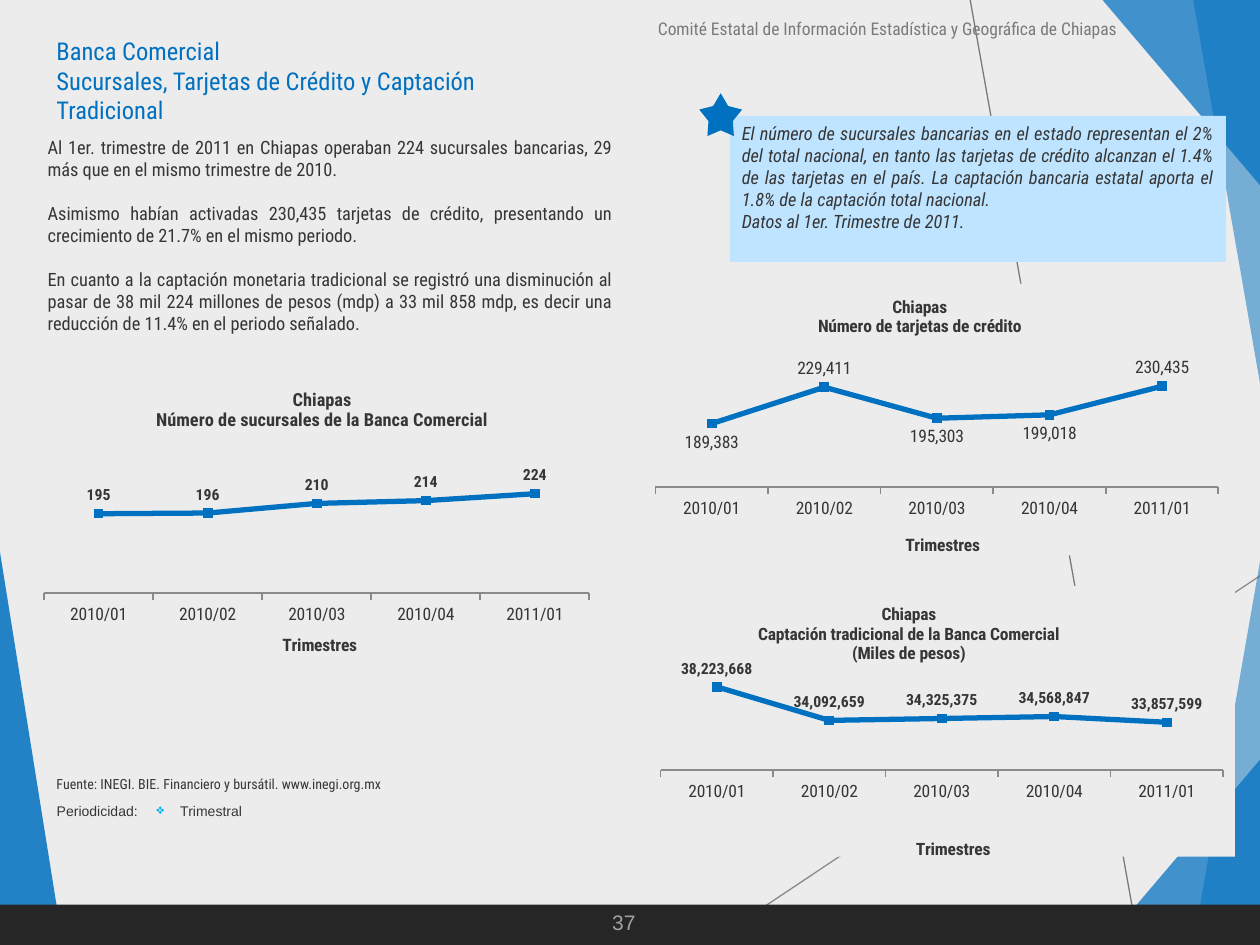
"""Build the Chiapas commercial banking slide with three quarterly line charts."""
from dataclasses import dataclass, field

from lxml import etree
from pptx import Presentation
from pptx.chart.data import CategoryChartData
from pptx.dml.color import RGBColor
from pptx.enum.chart import XL_CHART_TYPE, XL_LABEL_POSITION, XL_MARKER_STYLE, XL_TICK_MARK
from pptx.enum.shapes import MSO_CONNECTOR, MSO_SHAPE
from pptx.enum.text import MSO_ANCHOR, PP_ALIGN
from pptx.oxml import parse_xml
from pptx.oxml.ns import nsdecls, qn
from pptx.util import Inches, Pt

LEFT, RIGHT, JUSTIFY = PP_ALIGN.LEFT, PP_ALIGN.RIGHT, PP_ALIGN.JUSTIFY
TOP = MSO_ANCHOR.TOP
ABOVE, BELOW = XL_LABEL_POSITION.ABOVE, XL_LABEL_POSITION.BELOW
LINE_MARKERS = XL_CHART_TYPE.LINE_MARKERS
SQUARE = XL_MARKER_STYLE.SQUARE
TICK_OUTSIDE, TICK_NONE = XL_TICK_MARK.OUTSIDE, XL_TICK_MARK.NONE
RECTANGLE, STAR = MSO_SHAPE.RECTANGLE, MSO_SHAPE.STAR_5_POINT
STRAIGHT = MSO_CONNECTOR.STRAIGHT

BLUE = RGBColor(0x00, 0x70, 0xC0)
PALE_BLUE = RGBColor(0xBF, 0xE4, 0xFF)
BACKGROUND = RGBColor(0xEC, 0xEC, 0xEC)
BLACK = RGBColor(0x26, 0x26, 0x26)
TEXT = RGBColor(0x36, 0x36, 0x36)
GREY = RGBColor(0x7A, 0x7A, 0x7A)
LINE_GREY = RGBColor(0x8A, 0x8A, 0x8A)
PAGE_GREY = RGBColor(0xA2, 0xA2, 0xA2)

CONDENSED, ARIAL = "Roboto Condensed", "Arial"
WIDTH, HEIGHT = 10, 7.5
QUARTERS = ["2010/01", "2010/02", "2010/03", "2010/04", "2011/01"]


@dataclass
class TextSpec:
    box: tuple
    paragraphs: list
    size: float
    font: str = CONDENSED
    color: RGBColor = TEXT
    align: PP_ALIGN = LEFT
    gap: float = 0
    italic: bool = False
    inset: bool = True
    wrap: bool = True
    bullet: bool = False


@dataclass
class ChartSpec:
    box: tuple
    title: list
    title_size: float
    title_place: tuple
    axis_title_place: tuple
    plot: tuple
    limits: tuple
    values: list
    label_size: float = 9
    label_bold: bool = True
    below: list = field(default_factory=list)
    filled: bool = True


TEXTS = [
    TextSpec((4.45, 0.09, 4.51, 0.27), ["Comité Estatal de Información Estadística y Geográfica de Chiapas"],
             10, color=GREY, align=RIGHT),
    TextSpec((0.35, 0.24, 4.33, 0.71),
             ["Banca Comercial\vSucursales, Tarjetas de Crédito y Captación Tradicional"], 14, color=BLUE),
    TextSpec((0.28, 1.03, 4.68, 1.69), [
        "Al 1er. trimestre de 2011 en Chiapas operaban 224 sucursales bancarias, 29 más que en el mismo "
        "trimestre de 2010.",
        "Asimismo habían activadas 230,435 tarjetas de crédito, presentando un crecimiento de 21.7% en el "
        "mismo periodo.",
        "En cuanto a la captación monetaria tradicional se registró una disminución al pasar de 38 mil 224 "
        "millones de pesos (mdp) a 33 mil 858 mdp, es decir una reducción de 11.4% en el periodo señalado.",
    ], 10.5, align=JUSTIFY, gap=12.6),
    TextSpec((0.35, 6.11, 3.87, 0.24), ["Fuente: INEGI. BIE. Financiero y bursátil. www.inegi.org.mx"], 8),
    TextSpec((4.76, 7.17, 0.39, 0.3), ["37"], 12, ARIAL, PAGE_GREY, wrap=False),
    TextSpec((0.45, 6.37, 0.65, 0.13), ["Periodicidad:"], 8, ARIAL, inset=False, wrap=False),
    TextSpec((1.24, 6.37, 0.69, 0.13), ["Trimestral"], 8, ARIAL, inset=False, wrap=False, bullet=True),
]
CALLOUT = TextSpec((5.79, 0.92, 3.94, 1.16), [
    "El número de sucursales bancarias en el estado representan el 2% del total nacional, en tanto las "
    "tarjetas de crédito alcanzan el 1.4% de las tarjetas en el país. La captación bancaria estatal aporta "
    "el 1.8% de la captación total nacional.",
    "Datos al 1er. Trimestre de 2011.",
], 10.5, align=JUSTIFY, italic=True)
CHARTS = [
    ChartSpec((0.25, 2.88, 4.57, 2.36), ["Chiapas", "Número de sucursales de la Banca Comercial"], 10.5,
              (0.21, 0.07), (0.43, 0.92), (0.022, 0.317, 0.947, 0.475), (80, 280),
              [195, 196, 210, 214, 224], filled=False),
    ChartSpec((5.16, 2.25, 4.65, 2.2), ["Chiapas", "Número de tarjetas de crédito"], 10,
              (0.28, 0.03), (0.43, 0.91), (0.009, 0.346, 0.961, 0.402), (120000, 240000),
              [189383, 229411, 195303, 199018, 230435], 10, False, [0, 2, 3]),
    ChartSpec((5.15, 4.65, 4.65, 2.21),
              ["Chiapas", "Captación tradicional de la Banca Comercial", "(Miles de pesos)"], 10,
              (0.18, 0.05), (0.45, 0.92), (0.02, 0.32, 0.96, 0.36), (28000000, 40000000),
              [38223668, 34092659, 34325375, 34568847, 33857599]),
]
CORNERS = [([(8.75, 7.5), (10, 6.03), (10, 7.5)], 72), ([(9.47, 7.5), (10, 4.46), (10, 7.5)], 50)]


def inches(values: tuple) -> list:
    return [Inches(value) for value in values]


def write_text(frame, spec: TextSpec) -> None:
    frame.word_wrap = spec.wrap
    frame.vertical_anchor = TOP
    if not spec.inset:
        frame.margin_left = frame.margin_right = frame.margin_top = frame.margin_bottom = 0
    for index, text in enumerate(spec.paragraphs):
        paragraph = frame.add_paragraph() if index else frame.paragraphs[0]
        paragraph.text = text
        paragraph.alignment = spec.align
        if index and spec.gap:
            paragraph.space_before = Pt(spec.gap)
        if spec.bullet:
            properties = paragraph._p.get_or_add_pPr()
            properties.set("marL", str(Inches(0.19)))
            properties.set("indent", str(-Inches(0.19)))
            properties.append(parse_xml(f'<a:buClr {nsdecls("a")}><a:srgbClr val="00B0F0"/></a:buClr>'))
            properties.append(parse_xml(f'<a:buChar {nsdecls("a")} char="❖"/>'))
        font = paragraph.font
        font.name, font.size, font.italic = spec.font, Pt(spec.size), spec.italic
        font.color.rgb = spec.color


def add_shape(slide, kind: MSO_SHAPE, box: tuple, color: RGBColor):
    shape = slide.shapes.add_shape(kind, *inches(box))
    shape.shadow.inherit = False
    shape.fill.solid()
    shape.fill.fore_color.rgb = color
    shape.line.fill.background()
    return shape


def add_triangle(slide, points: list, opacity: int) -> None:
    corners = [tuple(inches(point)) for point in points]
    builder = slide.shapes.build_freeform(*corners[0])
    builder.add_line_segments(corners[1:], close=True)
    triangle = builder.convert_to_shape()
    triangle.shadow.inherit = False
    triangle.fill.solid()
    triangle.fill.fore_color.rgb = BLUE
    triangle.line.fill.background()
    color = triangle._element.spPr.find(f"{qn('a:solidFill')}/{qn('a:srgbClr')}")
    etree.SubElement(color, qn("a:alpha"), val=str(opacity * 1000))


def add_line(slide, start: tuple, end: tuple, color: RGBColor) -> None:
    connector = slide.shapes.add_connector(STRAIGHT, *inches(start + end))
    connector.line.color.rgb = color
    connector.line.width = Pt(0.75)
    etree.SubElement(connector._element.spPr, qn("a:effectLst"))


def layout(place: tuple, inner: bool = False):
    target = '<c:layoutTarget val="inner"/>' if inner else ""
    modes = "".join(f'<c:{axis}Mode val="edge"/>' for axis in "xy")
    sizes = "".join(f'<c:{name} val="{value}"/>' for name, value in zip("xywh", place))
    return parse_xml(f'<c:layout {nsdecls("c")}><c:manualLayout>{target}{modes}{sizes}</c:manualLayout></c:layout>')


def set_title(title, lines: list, size: float, place: tuple) -> None:
    frame = title.text_frame
    for index, line in enumerate(lines):
        paragraph = frame.add_paragraph() if index else frame.paragraphs[0]
        paragraph.text = line
        font = paragraph.font
        font.name, font.size, font.bold = CONDENSED, Pt(size), True
        font.color.rgb = TEXT
    for old in title._element.findall(qn("c:layout")):
        title._element.remove(old)
    title._element.find(qn("c:tx")).addnext(layout(place))


def style_label_font(font, spec: ChartSpec) -> None:
    font.name, font.size, font.bold = CONDENSED, Pt(spec.label_size), spec.label_bold
    font.color.rgb = TEXT


def add_line_chart(slide, spec: ChartSpec) -> None:
    data = CategoryChartData(number_format="#,##0")
    data.categories = QUARTERS
    data.add_series("Series 1", spec.values)
    chart = slide.shapes.add_chart(LINE_MARKERS, *inches(spec.box), data).chart
    chart.has_legend = False
    chart.font.name, chart.font.size = CONDENSED, Pt(10)
    chart.font.color.rgb = TEXT
    chart.has_title = True
    set_title(chart.chart_title, spec.title, spec.title_size, spec.title_place)
    fill = f'<a:solidFill><a:srgbClr val="{BACKGROUND}"/></a:solidFill>' if spec.filled else "<a:noFill/>"
    chart._chartSpace.find(qn("c:chart")).addnext(
        parse_xml(f'<c:spPr {nsdecls("c", "a")}>{fill}<a:ln><a:noFill/></a:ln></c:spPr>'))
    plot_area = chart._chartSpace.chart.plotArea
    for old in plot_area.findall(qn("c:layout")):
        plot_area.remove(old)
    plot_area.insert(0, layout(spec.plot, inner=True))

    value_axis, category_axis = chart.value_axis, chart.category_axis
    value_axis.minimum_scale, value_axis.maximum_scale = spec.limits
    value_axis.has_major_gridlines = False
    value_axis.visible = False
    category_axis.major_tick_mark, category_axis.minor_tick_mark = TICK_OUTSIDE, TICK_NONE
    category_axis.format.line.color.rgb = LINE_GREY
    category_axis.format.line.width = Pt(1)
    set_title(category_axis.axis_title, ["Trimestres"], 10, spec.axis_title_place)

    plot = chart.plots[0]
    plot.vary_by_categories = False
    series = plot.series[0]
    series.smooth = False
    series.format.line.color.rgb = BLUE
    series.format.line.width = Pt(3)
    series.marker.style, series.marker.size = SQUARE, 5
    series.marker.format.fill.solid()
    series.marker.format.fill.fore_color.rgb = BLUE
    series.marker.format.line.color.rgb = BLUE
    labels = series.data_labels
    labels.show_value, labels.position = True, ABOVE
    style_label_font(labels.font, spec)
    for index in spec.below:
        label = series.points[index].data_label
        style_label_font(label.font, spec)
        label.position = BELOW


def main() -> None:
    presentation = Presentation()
    presentation.slide_width, presentation.slide_height = inches((WIDTH, HEIGHT))
    slide = presentation.slides.add_slide(presentation.slide_layouts[6])
    slide.background.fill.solid()
    slide.background.fill.fore_color.rgb = BACKGROUND

    add_triangle(slide, [(0, 4.38), (0.5, 7.5), (0, 7.5)], 85)
    add_line(slide, (5.61, 7.5), (10, 4.57), LINE_GREY)
    add_line(slide, (7.7, 0), (9.04, 7.5), GREY)
    for points, opacity in CORNERS:
        add_triangle(slide, points, opacity)
        add_triangle(slide, [(x, HEIGHT - y) for x, y in points], opacity)
    add_shape(slide, RECTANGLE, (0, 7.18, WIDTH, 0.32), BLACK)

    for chart in CHARTS:
        add_line_chart(slide, chart)
    for text in TEXTS:
        write_text(slide.shapes.add_textbox(*inches(text.box)).text_frame, text)
    write_text(add_shape(slide, RECTANGLE, CALLOUT.box, PALE_BLUE).text_frame, CALLOUT)
    star = add_shape(slide, STAR, (5.55, 0.74, 0.34, 0.34), BLUE)
    star.adjustments[0] = 0.284
    presentation.save("out.pptx")


if __name__ == "__main__":
    main()
